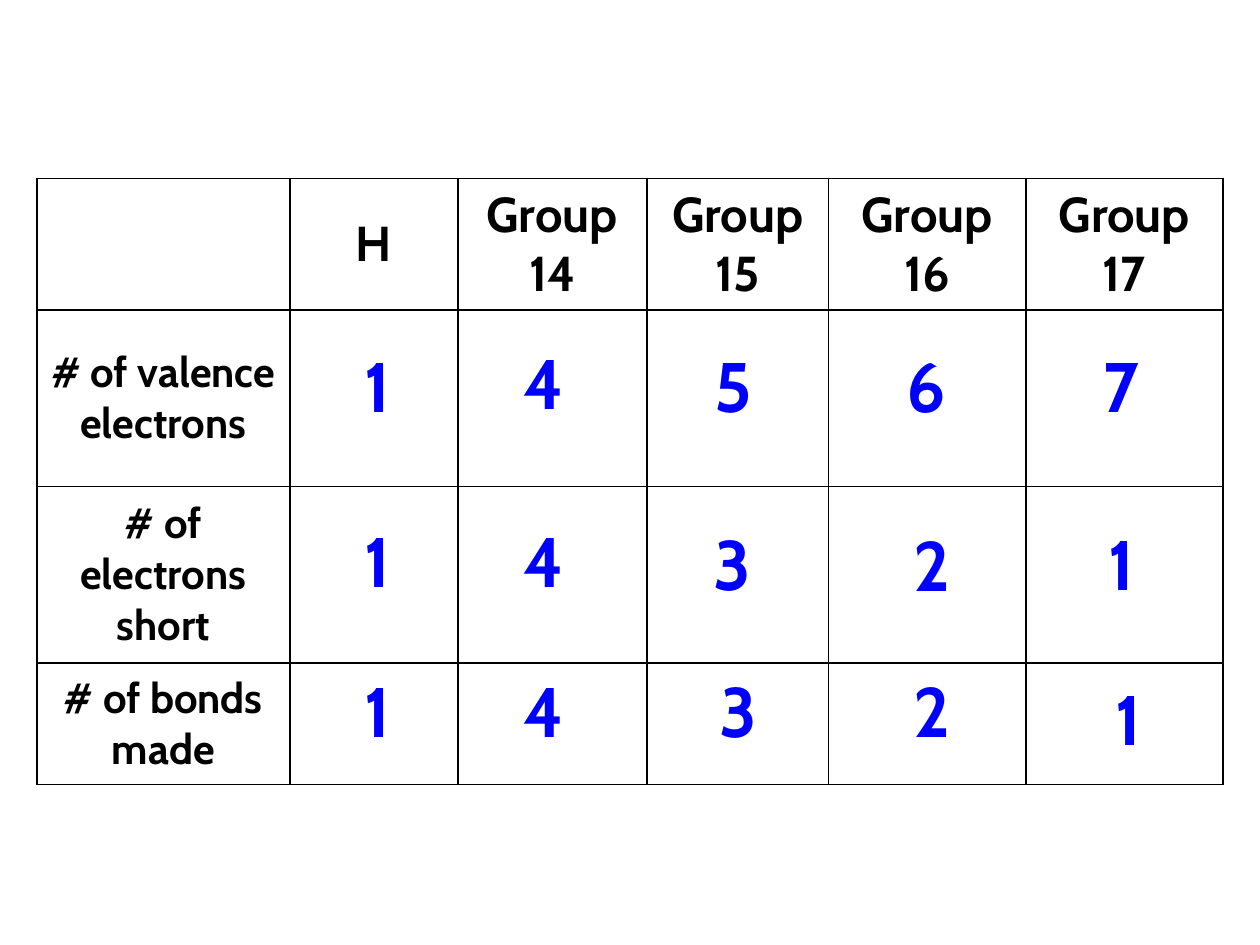
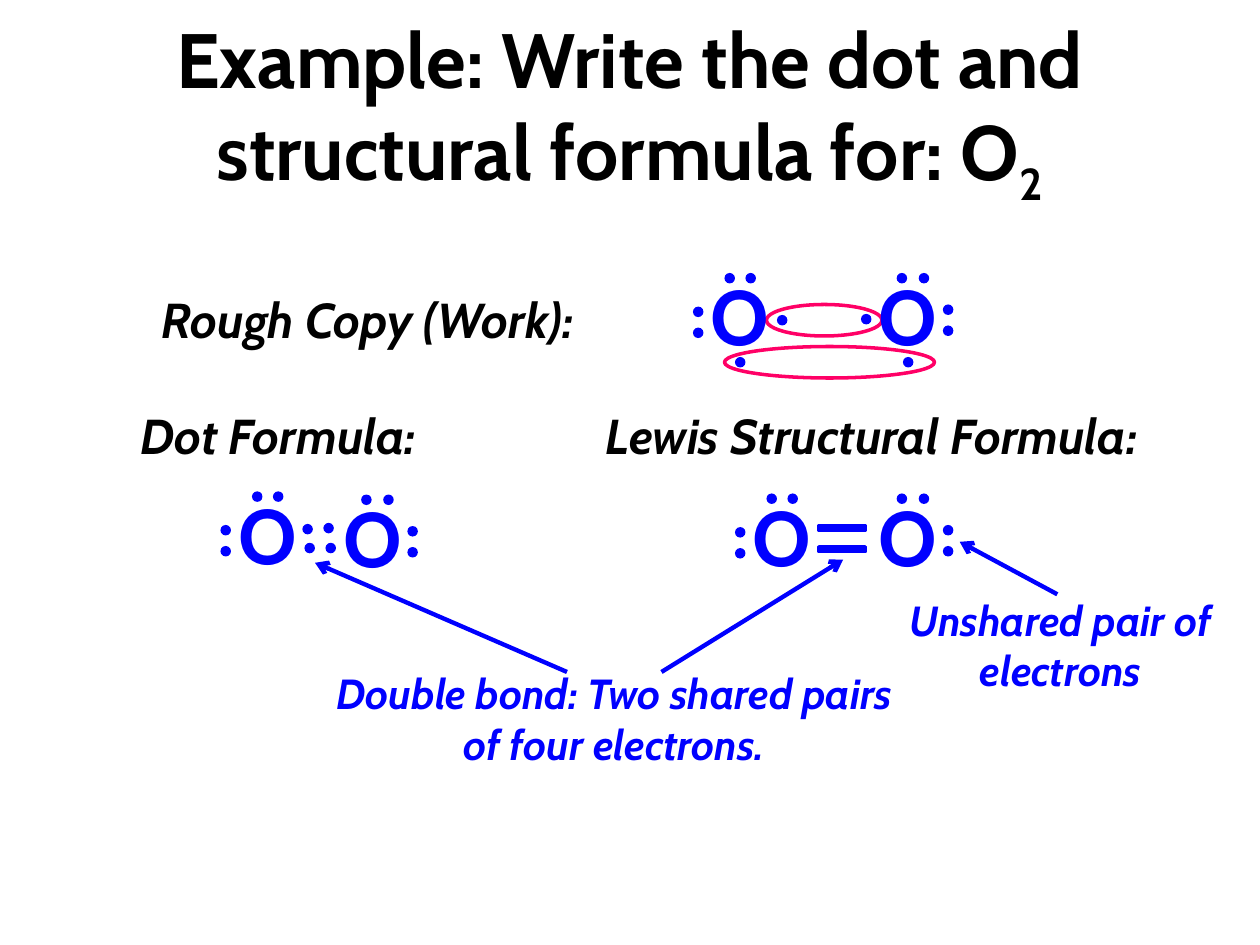
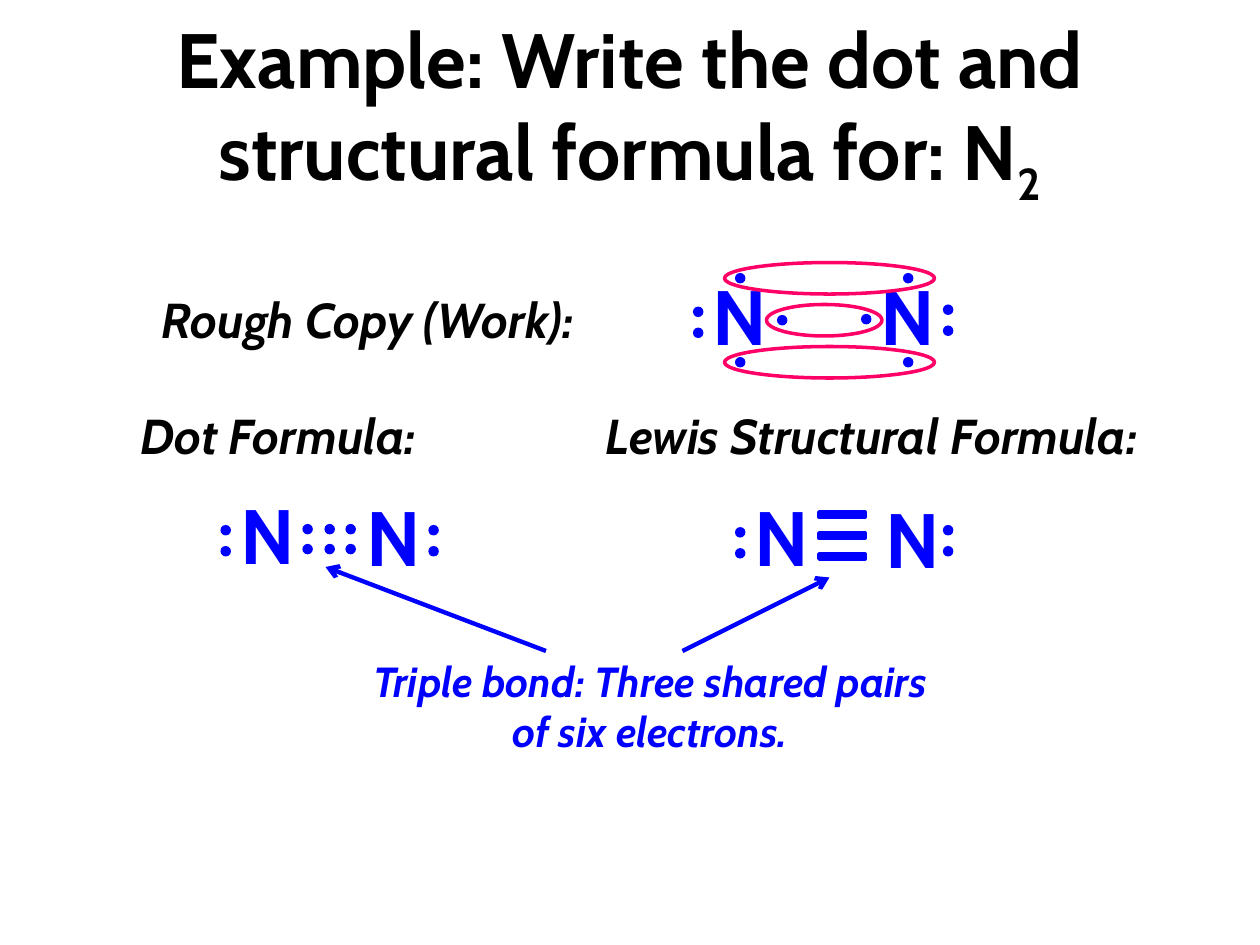
from dataclasses import dataclass

from lxml import etree
from pptx import Presentation
from pptx import util as u
from pptx.dml.color import RGBColor
from pptx.enum import shapes, text
from pptx.oxml.ns import qn


@dataclass(frozen=True)
class Theme:
    font: str = "Cabin"
    ink: str = "000000"
    blue: str = "0000FF"
    pink: str = "FF0066"
    title: int = 44
    symbol: int = 44
    number: int = 40
    heading: int = 28
    note: int = 24
    rule: float = 1
    outline: float = 2
    arrow: float = 2.5


COLS, ROWS = 120, 90  # grid cells across and down the slide
DOT = 1  # dot diameter in cells
ATOM_W, ATOM_H = 11, 10

# Electron places, measured from the corner of an atom's box
LEFT = [(1, 4.2), (1, 6.2)]
RIGHT = [(8.8, 4), (8.8, 6)]
TOP_OF_LEFT = [(4, 1), (6, 1)]
TOP_OF_RIGHT = [(4.4, 1), (6.5, 1)]
TOP_LONE, BOTTOM_LONE = [(5, 1)], [(5, 9)]
INNER_OF_LEFT, INNER_OF_RIGHT = [(9, 5)], [(1, 4.9)]


def apply(obj, formats):
    for name, value in formats.items():
        setattr(obj, name, value)


class Deck:
    def __init__(self, theme):
        self.t = theme
        self.prs = Presentation()
        self.prs.slide_width, self.prs.slide_height = u.Inches(10), u.Inches(7.5)
        self.s = None

    def new_slide(self):
        self.s = self.prs.slides.add_slide(self.prs.slide_layouts[6])

    def at(self, *cells):
        """Turn alternating column and row counts into lengths."""
        units = self.prs.slide_width / COLS, self.prs.slide_height / ROWS
        return [u.Emu(round(n * units[i % 2])) for i, n in enumerate(cells)]

    def put_text(self, tf, words, size, color, italic=False, sub="", space=True):
        p = tf.paragraphs[0]
        p.alignment = text.PP_ALIGN.CENTER
        if space:
            before = etree.SubElement(p._p.get_or_add_pPr(), qn("a:spcBef"))
            etree.SubElement(before, qn("a:spcPct")).set("val", "50000")
        for part in filter(None, (words, sub)):
            r = p.add_run()
            r.text = part
            apply(r.font, {"name": self.t.font, "size": u.Pt(size),
                           "bold": True, "italic": italic})
            r.font.color.rgb = RGBColor.from_string(color)
        if sub:
            r._r.get_or_add_rPr().set("baseline", "-25000")

    def label(self, box, words, size, color, italic=False):
        tf = self.s.shapes.add_textbox(*self.at(*box)).text_frame
        apply(tf, {"word_wrap": True, "auto_size": text.MSO_AUTO_SIZE.SHAPE_TO_FIT_TEXT})
        self.put_text(tf, words, size, color, italic)

    def title(self, words, sub):
        tf = self.s.shapes.add_textbox(*self.at(6, 3, 108, 15)).text_frame
        apply(tf, {"word_wrap": True, "vertical_anchor": text.MSO_ANCHOR.MIDDLE})
        self.put_text(tf, words, self.t.title, self.t.ink, sub=sub, space=False)

    def shape(self, kind, box, fill=None, line=None):
        sp = self.s.shapes.add_shape(kind, *self.at(*box))
        sp.shadow.inherit = False
        for part, color in ((sp.fill, fill), (sp.line.fill, line)):
            if color:
                part.solid()
                part.fore_color.rgb = RGBColor.from_string(color)
            else:
                part.background()
        if line:
            sp.line.width = u.Pt(self.t.outline)

    def dots(self, places, c=0, r=0):
        for x, y in places:
            self.shape(shapes.MSO_SHAPE.OVAL, (c + x, r + y, DOT, DOT), fill=self.t.blue)

    def atom(self, symbol, c, r, electrons, shift=(0, 0)):
        self.label((c + shift[0], r + shift[1], ATOM_W, ATOM_H),
                   symbol, self.t.symbol, self.t.blue)
        self.dots(electrons, c, r)

    def ring(self, *box):
        self.shape(shapes.MSO_SHAPE.OVAL, box, line=self.t.pink)

    def bond(self, c, r):
        self.shape(shapes.MSO_SHAPE.MATH_MINUS, (c, r, 6, 2), self.t.blue, self.t.blue)

    def arrow(self, *ends):
        cx = self.s.shapes.add_connector(shapes.MSO_CONNECTOR.STRAIGHT, *self.at(*ends))
        cx.line.color.rgb = RGBColor.from_string(self.t.blue)
        cx.line.width = u.Pt(self.t.arrow)
        etree.SubElement(cx.line._get_or_add_ln(), qn("a:tailEnd")).set("type", "arrow")
        etree.SubElement(cx._element.spPr, qn("a:effectLst"))

    def borders(self, cell):
        tcPr = cell._tc.get_or_add_tcPr()
        for side in "LRTB":
            ln = etree.SubElement(tcPr, qn(f"a:ln{side}"), w=str(u.Pt(self.t.rule)))
            fill = etree.SubElement(ln, qn("a:solidFill"))
            etree.SubElement(fill, qn("a:srgbClr")).set("val", self.t.ink)

    def table(self, c, r, widths, heights, heads, stubs):
        tb = self.s.shapes.add_table(len(heights), len(widths),
                                     *self.at(c, r, sum(widths), sum(heights))).table
        apply(tb, {"first_row": False, "horz_banding": False})
        for col, w in zip(tb.columns, widths):
            col.width = self.at(w)[0]
        for row, h in zip(tb.rows, heights):
            row.height = self.at(0, h)[1]
        for cell in tb.iter_cells():
            self.borders(cell)
            cell.fill.background()
            cell.vertical_anchor = text.MSO_ANCHOR.MIDDLE
        for i, words in enumerate(heads, 1):
            self.put_text(tb.cell(0, i).text_frame, words, self.t.heading, self.t.ink)
        for i, words in enumerate(stubs, 1):
            self.put_text(tb.cell(i, 0).text_frame, words, self.t.note, self.t.ink)

    def example(self, symbol):
        """Start a worked example: title, three headings and the shared rings."""
        self.new_slide()
        self.title(f"Example: Write the dot and structural formula for: {symbol}", "2")
        for words, box in (("Dot Formula:", (7, 38, 39, 6.8)),
                           ("Lewis Structural Formula:", (53, 38, 60, 6.8)),
                           ("Rough Copy (Work):", (10, 27, 50, 6.8))):
            self.label(box, words, self.t.heading, self.t.ink, italic=True)
        self.ring(73, 29, 11, 3)
        self.ring(69, 33, 20, 3)

    def note(self, box, words, *arrows):
        for ends in arrows:
            self.arrow(*ends)
        self.label(box, words, self.t.note, self.t.blue, italic=True)


def valence_table(d):
    d.new_slide()
    d.table(3.5, 17, [24.1, 16, 18, 17.3, 18.8, 18.8], [12.4, 16.8, 16.8, 11.6],
            ["H"] + [f"Group {n}" for n in range(14, 18)],
            ["# of valence electrons", "# of electrons short", "# of bonds made"])
    # Answers: digits with the column and row of each box
    answers = [
        ("14567", (30.4, 46.3, 64.3, 82.7, 101.3), (32, 31.7, 32, 32, 32)),
        ("14321", (30.4, 46.3, 64.3, 83.3, 101.3), (48.7, 48.7, 49, 49.1, 49)),
        ("14321", (30.4, 46.3, 64.8, 83.3, 102), (63, 63, 63, 63, 63.7)),
    ]
    for row in answers:
        for digit, x, y in zip(*row):
            d.label((x, y, ATOM_W, 9.2), digit, d.t.number, d.t.blue)


def oxygen(d):
    d.example("O")
    # Rough work
    d.atom("O", 65, 25, LEFT + TOP_OF_LEFT + INNER_OF_LEFT + BOTTOM_LONE)
    d.atom("O", 81, 25, RIGHT + TOP_OF_RIGHT + INNER_OF_RIGHT + BOTTOM_LONE)
    # Dot formula
    d.atom("O", 20, 45.8, LEFT + TOP_OF_LEFT)
    d.atom("O", 30, 46.1, RIGHT + TOP_OF_RIGHT)
    d.dots([(28.8, 49.9), (30.8, 49.8), (29, 51.7), (31, 51.7)])
    # Structural formula
    d.atom("O", 69, 46, LEFT + TOP_OF_LEFT)
    d.atom("O", 81, 46, RIGHT + TOP_OF_RIGHT)
    for r in (49.3, 51.3):
        d.bond(77.2, r)
    # Notes
    d.note((29, 63, 59, 10.9), "Double bond: Two shared pairs of four electrons.",
           (63, 64, 80.3, 53.3), (54, 64, 30, 53.6))
    d.note((82, 56, 38, 10.9), "Unshared pair of electrons", (100.7, 56.6, 91.4, 51.6))


def nitrogen(d):
    d.example("N")
    # Rough work
    d.atom("N", 65, 25, LEFT + INNER_OF_LEFT + TOP_LONE + BOTTOM_LONE)
    d.atom("N", 81, 25, RIGHT + INNER_OF_RIGHT + TOP_LONE + BOTTOM_LONE)
    d.ring(69, 25, 20, 3)
    # Dot formula
    d.atom("N", 20, 45.8, LEFT)
    d.atom("N", 32, 46, RIGHT)
    d.dots((x, y) for x in (28.8, 30.9, 32.9) for y in (49.9, 51.8))
    # Structural formula
    d.atom("N", 69, 46, LEFT)
    d.atom("N", 81, 46, RIGHT, shift=(0.4, 0.2))
    for r in (48, 50, 52):
        d.bond(77.2, r)
    # Note
    d.note((32.9, 61.8, 58, 10.9), "Triple bond: Three shared pairs of six electrons.",
           (65, 62, 79, 55), (52, 62, 31, 54))


def main():
    d = Deck(Theme())
    for build in (valence_table, oxygen, nitrogen):
        build(d)
    d.prs.save("out.pptx")


if __name__ == "__main__":
    main()
